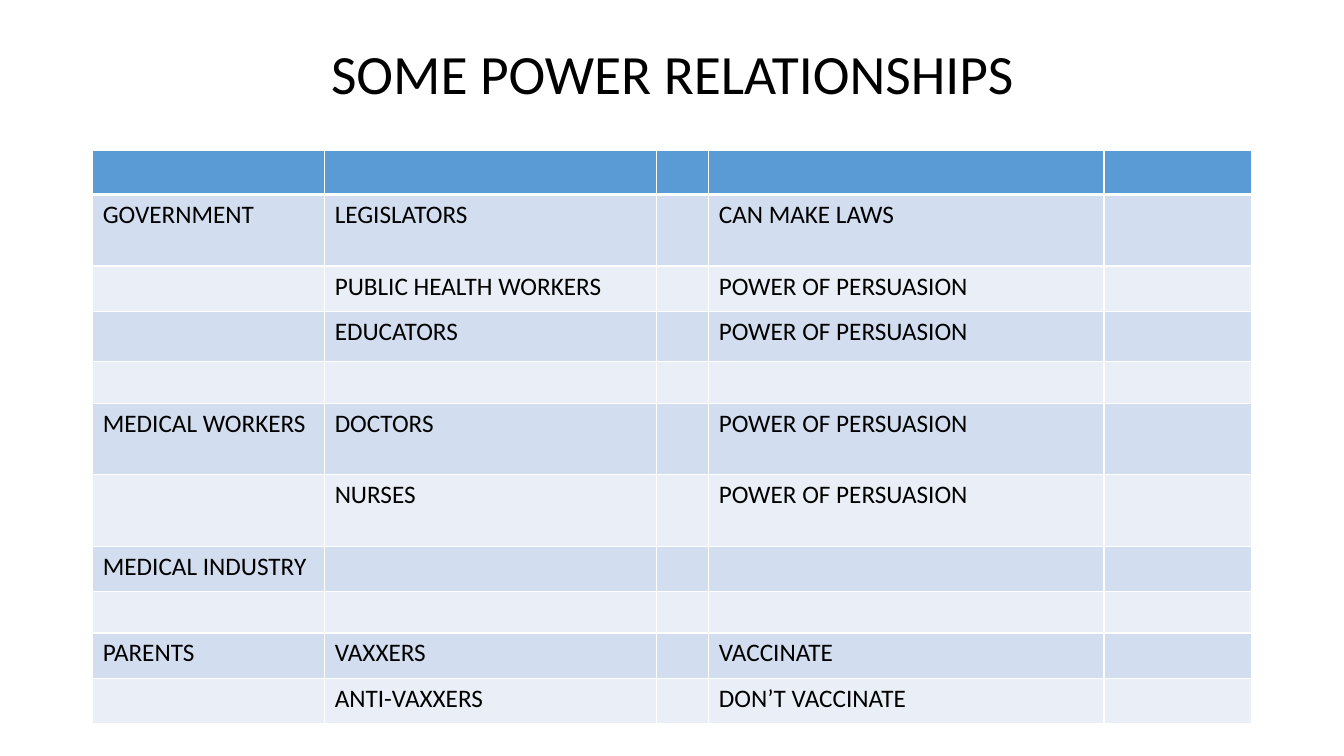
from lxml.etree import SubElement
from pptx import Presentation
from pptx.dml.color import RGBColor
from pptx.enum.text import MSO_ANCHOR, MSO_AUTO_SIZE, PP_ALIGN
from pptx.oxml.ns import qn
from pptx.util import Inches, Pt

COLORS = {"header": "5B9BD5", "odd": "D2DEEF", "even": "EAEFF7",
          "border": "FFFFFF", "text": "000000"}
COL_WIDTHS = [2.3, 3.29, 0.52, 3.92, 1.46]
PERSUASION = "POWER OF PERSUASION"
ROWS = [
    (0.44, "", "", ""),
    (0.71, "GOVERNMENT", "LEGISLATORS", "CAN MAKE LAWS"),
    (0.45, "", "PUBLIC HEALTH WORKERS", PERSUASION),
    (0.5, "", "EDUCATORS", PERSUASION),
    (0.41, "", "", ""),
    (0.71, "MEDICAL WORKERS", "DOCTORS", PERSUASION),
    (0.71, "", "NURSES", PERSUASION),
    (0.45, "MEDICAL INDUSTRY", "", ""),
    (0.41, "", "", ""),
    (0.45, "PARENTS", "VAXXERS", "VACCINATE"),
    (0.45, "", "ANTI-VAXXERS", "DON’T VACCINATE"),
]


def set_attrs(obj, values):
    """Set each attribute named in a dict of format values."""
    for name, value in values.items():
        setattr(obj, name, value)


def add_text(tf, text, size):
    """Write one run of black Calibri text and return its paragraph."""
    p = tf.paragraphs[0]
    r = p.add_run()
    r.text = text
    set_attrs(r.font, {"name": "Calibri", "size": Pt(size), "bold": False})
    r.font.color.rgb = RGBColor.from_string(COLORS["text"])
    return p


def add_border(cell, side, width):
    """Draw one white border on a cell."""
    ln = SubElement(cell._tc.get_or_add_tcPr(), qn(f"a:ln{side}"), w=str(Pt(width)))
    fill = SubElement(ln, qn("a:solidFill"))
    SubElement(fill, qn("a:srgbClr"), val=COLORS["border"])


def format_cell(cell, row):
    """Give a cell its borders and the fill of its row."""
    widths = {"L": 1, "R": 1, "T": 3 if row == 1 else 1, "B": 3 if row == 0 else 1}
    for side, width in widths.items():
        add_border(cell, side, width)
    key = "header" if row == 0 else "odd" if row % 2 else "even"
    cell.fill.solid()
    cell.fill.fore_color.rgb = RGBColor.from_string(COLORS[key])


def add_title(slide, left, top, width, height):
    """Place the centred slide title in its box."""
    sp = slide.shapes.title
    set_attrs(sp, {"left": Inches(left), "top": Inches(top),
                   "width": Inches(width), "height": Inches(height)})
    tf = sp.text_frame
    set_attrs(tf, {"vertical_anchor": MSO_ANCHOR.MIDDLE, "word_wrap": True,
                   "auto_size": MSO_AUTO_SIZE.NONE})
    p = add_text(tf, "SOME POWER RELATIONSHIPS", 39.6)
    set_attrs(p, {"alignment": PP_ALIGN.CENTER, "line_spacing": 0.9})


def add_power_table(slide, left, top, width):
    """Place the table of groups, members and powers."""
    height = sum(row[0] for row in ROWS)
    table = slide.shapes.add_table(len(ROWS), len(COL_WIDTHS), Inches(left),
                                   Inches(top), Inches(width), Inches(height)).table
    for col, col_width in zip(table.columns, COL_WIDTHS):
        col.width = Inches(col_width)
    for i, (row_height, group, member, power) in enumerate(ROWS):
        table.rows[i].height = Inches(row_height)
        for j, text in enumerate([group, member, "", power, ""]):
            cell = table.cell(i, j)
            format_cell(cell, i)
            if text:
                add_text(cell.text_frame, text, 18)


def main():
    """Build and save the slide."""
    prs = Presentation()
    set_attrs(prs, {"slide_width": Inches(13.33), "slide_height": Inches(7.5)})
    slide = prs.slides.add_slide(prs.slide_layouts[5])
    add_title(slide, 0.92, 0.4, 11.5, 0.71)
    add_power_table(slide, 0.92, 1.49, 11.5)
    prs.save("out.pptx")


if __name__ == "__main__":
    main()
